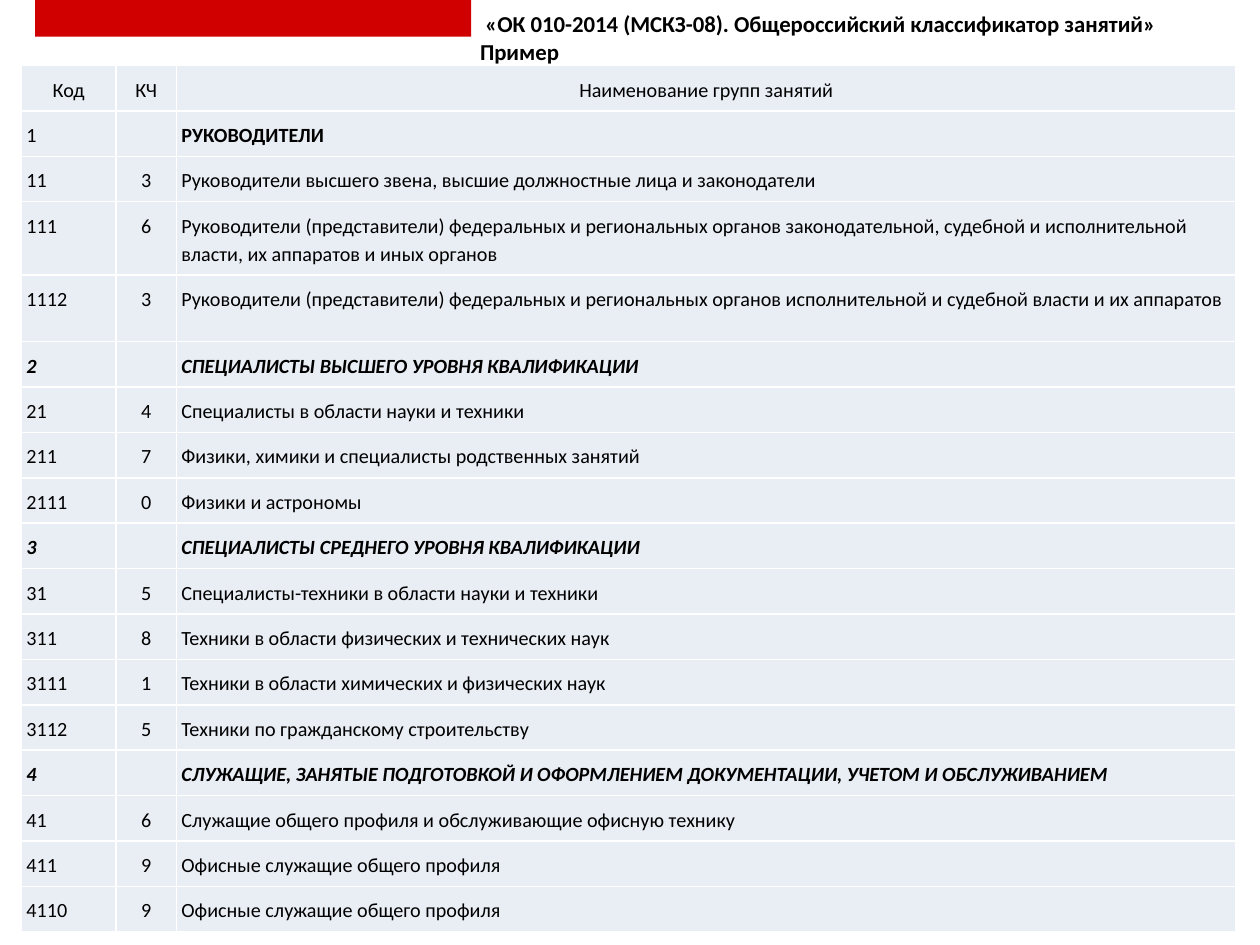
"""Build a slide with an excerpt from the classifier of occupations."""
from dataclasses import dataclass

from lxml.etree import SubElement
from pptx import Presentation
from pptx.dml.color import RGBColor
from pptx.enum.shapes import MSO_SHAPE as Shape
from pptx.enum.text import MSO_ANCHOR as Anchor, MSO_AUTO_SIZE as AutoSize, PP_ALIGN as Align
from pptx.oxml.ns import qn
from pptx.util import Inches, Pt

RED, BLACK, WHITE, PALE = "D00000", "000000", "FFFFFF", "E9EDF4"
TEXT_SIZE = 11.5
COLUMN_WIDTHS = (0.75, 0.48, 8.41)
HEADINGS = ("Код", "КЧ", "Наименование групп занятий")
TITLE_LINES = (
    " «ОК 010-2014 (МСКЗ-08). Общероссийский классификатор занятий»",
    "Пример",
)


@dataclass(frozen=True)
class Occupation:
    code: str
    check: str
    name: str
    bold_code: bool = False
    bold_name: bool = False
    italic: bool = False
    height: float = 0.33


def major_group(code: str, name: str) -> Occupation:
    return Occupation(code, "", name, bold_code=True, bold_name=True, italic=True)


OCCUPATIONS = (
    Occupation("1", "", "РУКОВОДИТЕЛИ", bold_name=True),
    Occupation("11", "3", "Руководители высшего звена, высшие должностные лица и законодатели"),
    Occupation("111", "6", "Руководители (представители) федеральных и региональных органов "
               "законодательной, судебной и исполнительной власти, их аппаратов и иных органов",
               height=0.53),
    Occupation("1112", "3", "Руководители (представители) федеральных и региональных органов "
               "исполнительной и судебной власти и их аппаратов", height=0.53),
    major_group("2", "СПЕЦИАЛИСТЫ ВЫСШЕГО УРОВНЯ КВАЛИФИКАЦИИ"),
    Occupation("21", "4", "Специалисты в области науки и техники"),
    Occupation("211", "7", "Физики, химики и специалисты родственных занятий"),
    Occupation("2111", "0", "Физики и астрономы"),
    major_group("3", "СПЕЦИАЛИСТЫ СРЕДНЕГО УРОВНЯ КВАЛИФИКАЦИИ"),
    Occupation("31", "5", "Специалисты-техники в области науки и техники"),
    Occupation("311", "8", "Техники в области физических и технических наук"),
    Occupation("3111", "1", "Техники в области химических и физических наук"),
    Occupation("3112", "5", "Техники по гражданскому строительству"),
    major_group("4", "СЛУЖАЩИЕ, ЗАНЯТЫЕ ПОДГОТОВКОЙ И ОФОРМЛЕНИЕМ ДОКУМЕНТАЦИИ, "
                "УЧЕТОМ И ОБСЛУЖИВАНИЕМ"),
    Occupation("41", "6", "Служащие общего профиля и обслуживающие офисную технику"),
    Occupation("411", "9", "Офисные служащие общего профиля"),
    Occupation("4110", "9", "Офисные служащие общего профиля"),
)


def apply_format(target, values: dict) -> None:
    for attribute, value in values.items():
        setattr(target, attribute, value)


def paint(color_format, color: str) -> None:
    color_format.rgb = RGBColor.from_string(color)


def add_text(paragraph, text: str, size: float, bold: bool, italic: bool = False) -> None:
    run = paragraph.add_run()
    run.text = text
    apply_format(run.font, {"name": "Calibri", "size": Pt(size), "bold": bold, "italic": italic})
    paint(run.font.color, BLACK)


def add_banner(slide) -> None:
    banner = slide.shapes.add_shape(Shape.RECTANGLE, Inches(0.28), 0, Inches(3.46), Inches(0.29))
    banner.shadow.inherit = False
    banner.fill.solid()
    paint(banner.fill.fore_color, RED)
    banner.line.fill.background()


def set_title(slide) -> None:
    title = slide.shapes.title
    apply_format(title, {"left": Inches(3.71), "top": Inches(0.03),
                         "width": Inches(6.17), "height": Inches(0.54)})
    frame = title.text_frame
    apply_format(frame, {"word_wrap": True, "auto_size": AutoSize.SHAPE_TO_FIT_TEXT,
                         "vertical_anchor": Anchor.TOP})
    for index, line in enumerate(TITLE_LINES):
        paragraph = frame.add_paragraph() if index else frame.paragraphs[0]
        apply_format(paragraph, {"alignment": Align.LEFT, "space_before": Pt(0),
                                 "line_spacing": 1.0})
        add_text(paragraph, line, 13, bold=True)


def add_borders(cell) -> None:
    properties = cell._tc.get_or_add_tcPr()
    for side in ("lnL", "lnR", "lnT", "lnB"):
        border = SubElement(properties, qn(f"a:{side}"), w=str(Pt(1)))
        fill = SubElement(border, qn("a:solidFill"))
        SubElement(fill, qn("a:srgbClr"), val=WHITE)


def fill_cell(cell, text: str, align: Align, bold: bool, italic: bool) -> None:
    add_borders(cell)
    cell.fill.solid()
    paint(cell.fill.fore_color, PALE)
    apply_format(cell, {"margin_left": Inches(0.04), "margin_right": Inches(0.04),
                        "margin_top": Inches(0.07), "margin_bottom": Inches(0.07),
                        "vertical_anchor": Anchor.TOP})
    paragraph = cell.text_frame.paragraphs[0]
    apply_format(paragraph, {"alignment": align, "line_spacing": 1.15})
    if text:
        add_text(paragraph, text, TEXT_SIZE, bold, italic)
    else:
        SubElement(paragraph._p, qn("a:endParaRPr"), sz=str(int(TEXT_SIZE * 100)))


def add_classifier(slide) -> None:
    entries = (Occupation(*HEADINGS), *OCCUPATIONS)
    frame = slide.shapes.add_table(len(entries), len(COLUMN_WIDTHS), Inches(0.17), Inches(0.52),
                                   Inches(9.63), Inches(6.91))
    table = frame.table
    apply_format(table, {"first_row": False, "horz_banding": False})
    for column, width in zip(table.columns, COLUMN_WIDTHS):
        column.width = Inches(width)
    for index, (row, entry) in enumerate(zip(table.rows, entries)):
        row.height = Inches(entry.height)
        side_align = Align.LEFT if index else Align.CENTER
        code, check, name = row.cells
        fill_cell(code, entry.code, side_align, entry.bold_code, entry.italic)
        fill_cell(check, entry.check, Align.CENTER, False, False)
        fill_cell(name, entry.name, side_align, entry.bold_name, entry.italic)
    frame.height = Inches(6.91)


def main() -> None:
    deck = Presentation()
    apply_format(deck, {"slide_width": Inches(10), "slide_height": Inches(7.5)})
    slide = deck.slides.add_slide(deck.slide_layouts.get_by_name("Title Only"))
    add_banner(slide)
    set_title(slide)
    add_classifier(slide)
    deck.save("out.pptx")


if __name__ == "__main__":
    main()
